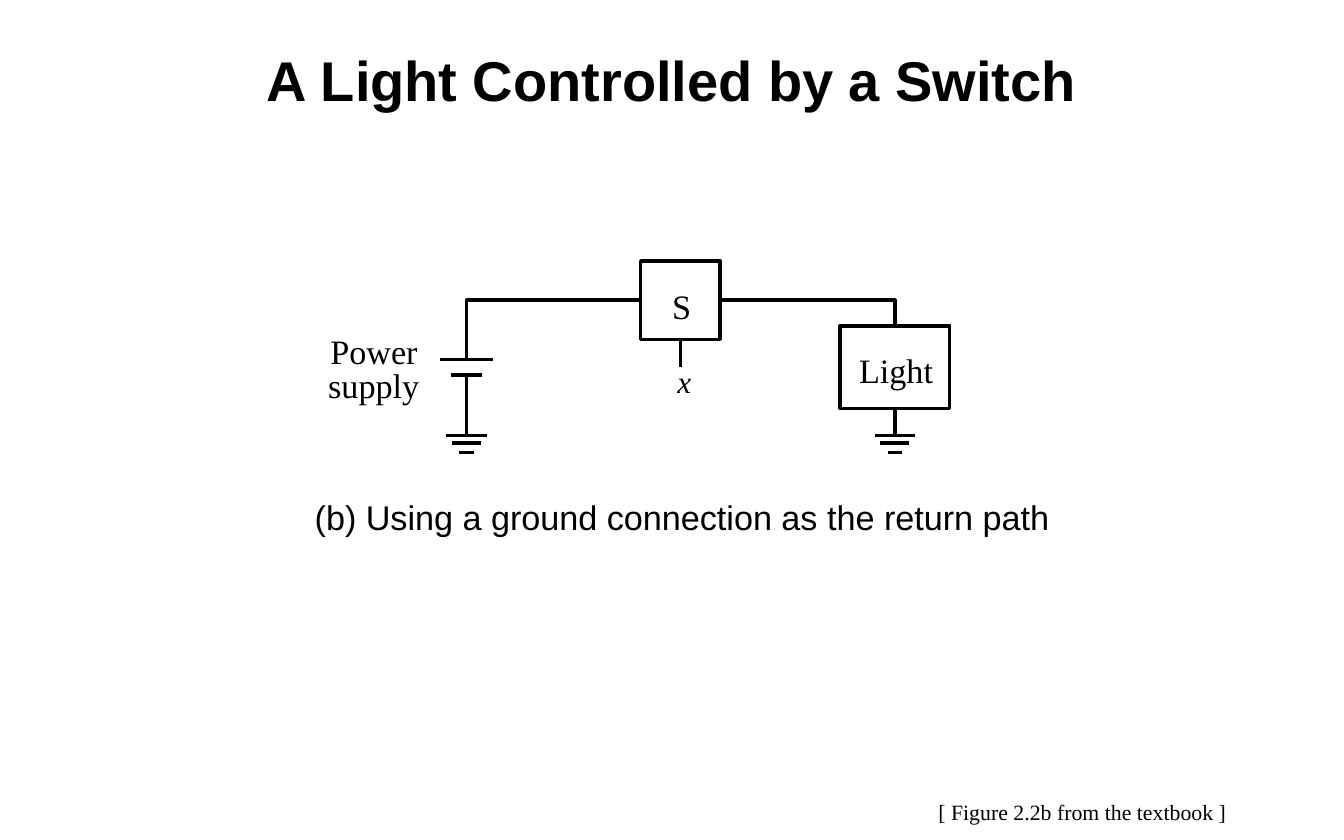
from lxml import etree
from pptx import Presentation, util as u
from pptx.dml.color import RGBColor
from pptx.enum import shapes, text
from pptx.oxml.ns import qn

COLORS = {"ink": "000000", "paper": "FFFFFF"}
SERIF, SANS = "Times New Roman", "Arial"
COLUMNS, ROWS = 120, 75
WIDTH, HEIGHT = u.Inches(12), u.Inches(7.5)
LINE = u.Pt(2.25)

# All places are in grid columns and rows: left, top, width, height.
BLOCKS = {"switch": (57.2, 23.3, 7.1, 7), "light": (75, 29.1, 9.8, 7.4)}
# Text, place, inset, font, size, style
LABELS = [
    ("Power", (29.5, 29.5, 8.7, 3.7), 0, SERIF, 22, {}),
    ("supply", (29.3, 32.5, 8.2, 3.7), 0, SERIF, 22, {}),
    ("S", (60, 25.5, 2.5, 3.7), 0, SERIF, 22, {}),
    ("Light", (76.7, 31.2, 7.5, 3.7), 0, SERIF, 22, {}),
    ("x", (59.5, 31.9, 4.8, 4.3), 1, SERIF, 20, {"italic": True}),
    ("(b) Using a ground connection as the return path",
     (28.1, 44.3, 66.5, 3.7), 0, SANS, 22, {}),
    ("[ Figure 2.2b from the textbook ]",
     (82.8, 70.8, 27.9, 3.4), 1, SERIF, 14, {}),
]
TITLE = ("A Light Controlled by a Switch", (10, 3.3, 100, 7.5), 1, SANS, 36, {"bold": True})

WIRE_ROW = 26.8
SUPPLY_COLUMN, LIGHT_COLUMN = 41.65, 79.9
LEFT_BEND, RIGHT_BEND = 48.8, 72.7
CONTROL_END = 32.8
# Row and half width of each bar
BATTERY = [(32.1, 2.35), (33.5, 1.35)]
GROUND = [(38.9, 1.8), (39.55, 1.3), (40.4, 0.65)]

deck = Presentation()
deck.slide_width, deck.slide_height = WIDTH, HEIGHT
page = deck.slides.add_slide(deck.slide_layouts[6])
page.background.fill.solid()
page.background.fill.fore_color.rgb = RGBColor.from_string(COLORS["paper"])


def x(columns):
    return round(WIDTH * columns / COLUMNS)


def y(rows):
    return round(HEIGHT * rows / ROWS)


def place(left, top, width, height):
    return x(left), y(top), x(width), y(height)


def ink_line(item):
    item.line.color.rgb = RGBColor.from_string(COLORS["ink"])
    item.line.width = LINE


def outline(shape):
    shape.shadow.inherit = False
    shape.fill.background()
    ink_line(shape)


def add_wire(start, end, block=None, side=0):
    """Draw a straight wire, its start joined to a side of a block if given."""
    wire = page.shapes.add_connector(
        shapes.MSO_CONNECTOR.STRAIGHT, x(start[0]), y(start[1]), x(end[0]), y(end[1]))
    if block is not None:
        wire.begin_connect(block, side)
    ink_line(wire)
    etree.SubElement(wire._element.spPr, qn("a:effectLst"))


def add_bend(*points):
    (first, *rest) = [(x(column), y(row)) for column, row in points]
    builder = page.shapes.build_freeform(*first)
    builder.add_line_segments(rest, close=False)
    outline(builder.convert_to_shape())


def add_bars(center, bars):
    for row, half in bars:
        add_wire((center - half, row), (center + half, row))


def add_label(words, where, inset, font, size, style):
    box = page.shapes.add_textbox(*place(*where))
    frame = box.text_frame
    frame.word_wrap = True
    frame.margin_left = frame.margin_right = u.Inches(0.1 * inset)
    frame.margin_top = frame.margin_bottom = u.Inches(0.05 * inset)
    span = frame.paragraphs[0].add_run()
    span.text = words
    span.font.name, span.font.size = font, u.Pt(size)
    span.font.color.rgb = RGBColor.from_string(COLORS["ink"])
    for name, value in style.items():
        setattr(span.font, name, value)
    return frame


blocks = {}
for name, where in BLOCKS.items():
    blocks[name] = page.shapes.add_shape(shapes.MSO_SHAPE.RECTANGLE, *place(*where))
    outline(blocks[name])

left, top, width, height = BLOCKS["switch"]
middle, bottom = left + width / 2, top + height
add_wire((left, WIRE_ROW), (LEFT_BEND, WIRE_ROW), blocks["switch"], 1)
add_wire((left + width, WIRE_ROW), (RIGHT_BEND, WIRE_ROW), blocks["switch"], 3)
add_wire((middle, bottom), (middle, CONTROL_END), blocks["switch"], 2)

light_top = BLOCKS["light"][1]
light_bottom = light_top + BLOCKS["light"][3]
add_bend((LEFT_BEND, WIRE_ROW), (SUPPLY_COLUMN, WIRE_ROW), (SUPPLY_COLUMN, BATTERY[0][0]))
add_bend((RIGHT_BEND, WIRE_ROW), (LIGHT_COLUMN, WIRE_ROW), (LIGHT_COLUMN, light_top))

ground_row = GROUND[0][0]
add_bars(SUPPLY_COLUMN, BATTERY)
add_wire((SUPPLY_COLUMN, BATTERY[1][0]), (SUPPLY_COLUMN, ground_row))
add_wire((LIGHT_COLUMN, light_bottom), (LIGHT_COLUMN, ground_row), blocks["light"], 2)
for column in (SUPPLY_COLUMN, LIGHT_COLUMN):
    add_bars(column, GROUND)

for label in LABELS:
    add_label(*label)
title = add_label(*TITLE)
title.vertical_anchor = text.MSO_ANCHOR.MIDDLE
title.paragraphs[0].alignment = text.PP_ALIGN.CENTER

deck.save("out.pptx")
